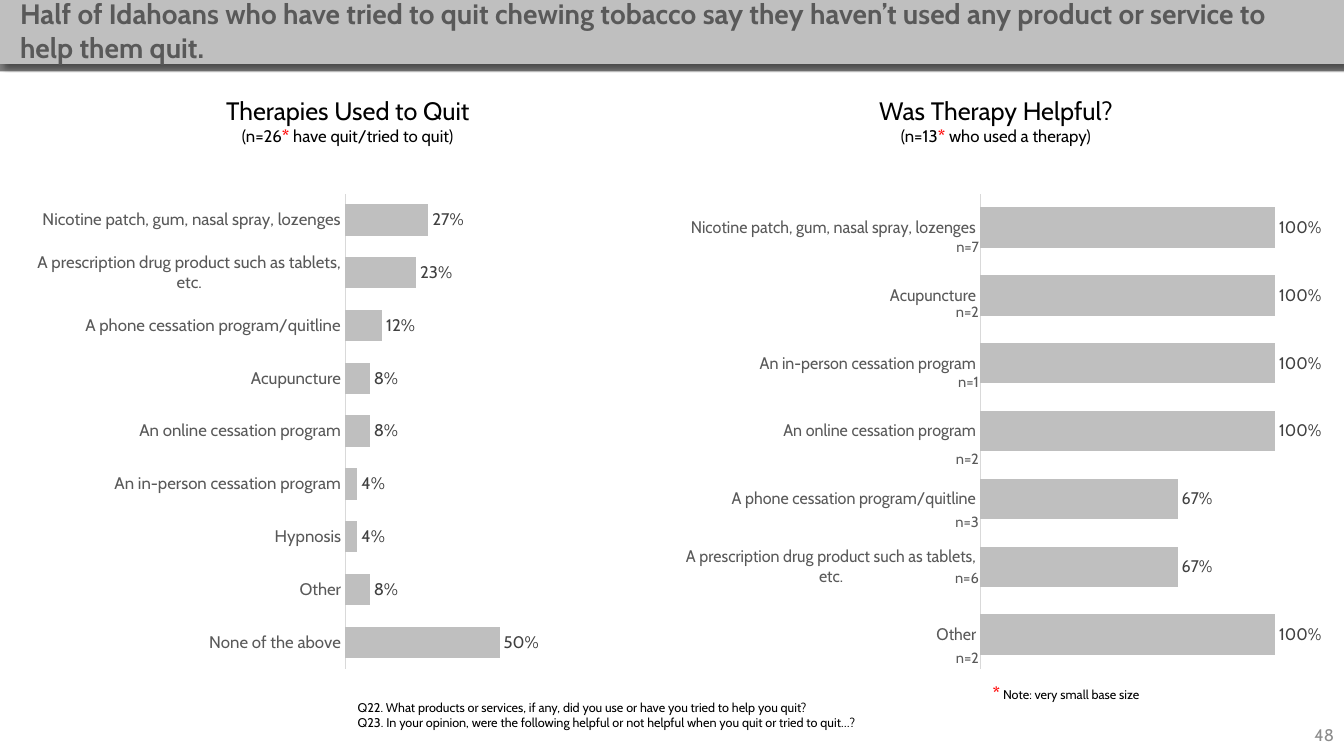
from dataclasses import dataclass

import lxml.etree
import pptx
import pptx.chart.data
import pptx.dml.color
import pptx.enum.chart
import pptx.enum.shapes
import pptx.enum.text
import pptx.oxml.ns
import pptx.util

FONT = "Cabin"
COLORS = {
    "strip": "808080",
    "bar": "BFBFBF",
    "title": "595959",
    "label": "404040",
    "number": "8C8C8C",
    "axis": "D9D9D9",
    "text": "000000",
    "star": "FF0000",
}
COLUMNS, ROWS = 160, 90
WIDTH, HEIGHT = pptx.util.Inches(13.333), pptx.util.Inches(7.5)
ALIGN = pptx.enum.text.PP_ALIGN
qn = pptx.oxml.ns.qn


@dataclass
class Area:
    column: float
    row: float
    columns: float
    rows: float

    def place(self) -> tuple[int, int, int, int]:
        return (
            round(self.column * WIDTH / COLUMNS),
            round(self.row * HEIGHT / ROWS),
            round(self.columns * WIDTH / COLUMNS),
            round(self.rows * HEIGHT / ROWS),
        )


@dataclass
class Panel:
    heading: str
    base: str
    group: str
    heading_column: float
    chart_column: float
    values: dict[str, float]


@dataclass
class BaseTag:
    text: str
    row: float


PATCH = "Nicotine patch, gum, nasal spray, lozenges"
DRUG = "A prescription drug product such as tablets, etc."
PHONE = "A phone cessation program/quitline"
ONLINE = "An online cessation program"
PERSON = "An in-person cessation program"

PANELS = [
    Panel("Therapies Used to Quit", "(n=26", " have quit/tried to quit)", 17.88, 2.76,
          {PATCH: 0.27, DRUG: 0.23, PHONE: 0.12, "Acupuncture": 0.08, ONLINE: 0.08,
           PERSON: 0.04, "Hypnosis": 0.04, "Other": 0.08, "None of the above": 0.5}),
    Panel("Was Therapy Helpful?", "(n=13", " who used a therapy)", 95.04, 80.04,
          {PATCH: 1, "Acupuncture": 1, PERSON: 1, ONLINE: 1, PHONE: 0.67,
           DRUG: 0.67, "Other": 1}),
]
BASE_TAGS = [
    BaseTag("n=7", 27.72), BaseTag("n=2", 35.52), BaseTag("n=1", 43.8),
    BaseTag("n=2", 52.92), BaseTag("n=3", 60.48), BaseTag("n=6", 67.08),
    BaseTag("n=2", 76.68),
]
QUESTIONS = [
    "Q22. What products or services, if any, did you use or have you tried to help you quit?",
    "Q23. In your opinion, were the following helpful or not helpful when you quit or tried to quit…?",
]


def rgb(name: str) -> pptx.dml.color.RGBColor:
    return pptx.dml.color.RGBColor.from_string(COLORS[name])


def set_font(font, *, size: float, color: str = "text", bold: bool = False) -> None:
    font.name = FONT
    font.size = pptx.util.Pt(size)
    font.color.rgb = rgb(color)
    font.bold = bold


def add_span(para, text: str, *, size: float, color: str = "text", bold: bool = False) -> None:
    span = para.add_run()
    span.text = text
    set_font(span.font, size=size, color=color, bold=bold)


def add_box(page, area: Area, *, aligns=(ALIGN.LEFT,), wrap: bool = True, grow: bool = True):
    frame = page.shapes.add_textbox(*area.place()).text_frame
    frame.word_wrap = wrap
    if grow:
        frame.auto_size = pptx.enum.text.MSO_AUTO_SIZE.SHAPE_TO_FIT_TEXT
    else:
        frame.vertical_anchor = pptx.enum.text.MSO_ANCHOR.MIDDLE
    paras = [frame.paragraphs[0]] + [frame.add_paragraph() for _ in aligns[1:]]
    for para, align in zip(paras, aligns):
        para.alignment = align
    return paras


def add_band(page, rows: float, color: str):
    band = page.shapes.add_shape(
        pptx.enum.shapes.MSO_SHAPE.RECTANGLE, *Area(0, 0, COLUMNS, rows).place())
    band.shadow.inherit = False
    band.fill.solid()
    band.fill.fore_color.rgb = rgb(color)
    band.line.fill.background()
    return band


def add_shadow(band) -> None:
    effects = band._element.spPr.find(qn("a:effectLst"))
    shadow = lxml.etree.SubElement(
        effects, qn("a:outerShdw"), blurRad=str(pptx.util.Pt(4)),
        dist=str(pptx.util.Pt(3)), dir=str(45 * 60000), rotWithShape="0")
    color = lxml.etree.SubElement(shadow, qn("a:srgbClr"), val=COLORS["text"])
    lxml.etree.SubElement(color, qn("a:alpha"), val="43000")


def set_plot_layout(chart) -> None:
    plot_area = chart._chartSpace.chart.plotArea
    for old in plot_area.findall(qn("c:layout")):
        plot_area.remove(old)
    layout = lxml.etree.Element(qn("c:layout"))
    manual = lxml.etree.SubElement(layout, qn("c:manualLayout"))
    settings = {"layoutTarget": "inner", "xMode": "edge", "yMode": "edge",
                "x": "0.496", "y": "0.03", "w": "0.476", "h": "0.939"}
    for key, value in settings.items():
        lxml.etree.SubElement(manual, qn(f"c:{key}"), val=value)
    plot_area.insert(0, layout)


def add_bar_chart(page, panel: Panel) -> None:
    data = pptx.chart.data.CategoryChartData(number_format="0%")
    data.categories = list(reversed(panel.values))
    data.add_series("Series 1", list(reversed(panel.values.values())))
    area = Area(panel.chart_column, 21.24, 77.28, 60.24)
    chart = page.shapes.add_chart(
        pptx.enum.chart.XL_CHART_TYPE.BAR_CLUSTERED, *area.place(), data).chart
    chart.has_title = False
    chart.has_legend = False
    set_font(chart.font, size=10)

    axis = chart.category_axis
    axis.major_tick_mark = pptx.enum.chart.XL_TICK_MARK.NONE
    axis.format.line.color.rgb = rgb("axis")
    axis.format.line.width = pptx.util.Pt(0.75)
    set_font(axis.tick_labels.font, size=12, color="title")

    scale = chart.value_axis
    scale.minimum_scale, scale.maximum_scale = 0, 1
    scale.has_major_gridlines = False
    scale.visible = False

    plot = chart.plots[0]
    plot.gap_width = 68
    plot.vary_by_categories = False
    plot.series[0].format.fill.solid()
    plot.series[0].format.fill.fore_color.rgb = rgb("bar")
    labels = plot.series[0].data_labels
    labels.show_value = True
    labels.position = pptx.enum.chart.XL_LABEL_POSITION.OUTSIDE_END
    labels.number_format = "0%"
    labels.number_format_is_linked = False
    set_font(labels.font, size=12, color="label")
    set_plot_layout(chart)


def add_panel(page, panel: Panel) -> None:
    add_bar_chart(page, panel)
    heading, base = add_box(
        page, Area(panel.heading_column, 10.8, 47.04, 7.32), aligns=(ALIGN.CENTER,) * 2)
    add_span(heading, panel.heading, size=18)
    add_span(base, panel.base, size=12)
    add_span(base, "*", size=12, color="star", bold=True)
    add_span(base, panel.group, size=12)


def main() -> None:
    deck = pptx.Presentation()
    deck.slide_width, deck.slide_height = WIDTH, HEIGHT
    page = deck.slides.add_slide(deck.slide_layouts[6])

    add_band(page, 8.5, "strip")
    add_shadow(add_band(page, 7.6, "bar"))
    title, = add_box(page, Area(1.2, -0.96, 156.12, 9.24))
    add_span(title, "Half of Idahoans who have tried to quit chewing tobacco say they "
             "haven’t used any product or service to help them quit.",
             size=20, color="title", bold=True)

    for panel in PANELS:
        add_panel(page, panel)
    for tag in BASE_TAGS:
        para, = add_box(page, Area(104.16, tag.row, 13.56, 3.48), aligns=(ALIGN.RIGHT,))
        add_span(para, tag.text, size=10.5, color="title")

    paras = add_box(page, Area(41.4, 82.68, 61.68, 4.8), aligns=(ALIGN.LEFT,) * 2, wrap=False)
    for para, question in zip(paras, QUESTIONS):
        add_span(para, question, size=9)
    note, = add_box(page, Area(117, 80.64, 30.12, 3.6))
    add_span(note, "*", size=12, color="star", bold=True)
    add_span(note, " Note: very small base size", size=9)
    number, = add_box(page, Area(124, 85.08, 36, 4.8), aligns=(ALIGN.RIGHT,), grow=False)
    add_span(number, "48", size=12, color="number")

    deck.save("out.pptx")


if __name__ == "__main__":
    main()
